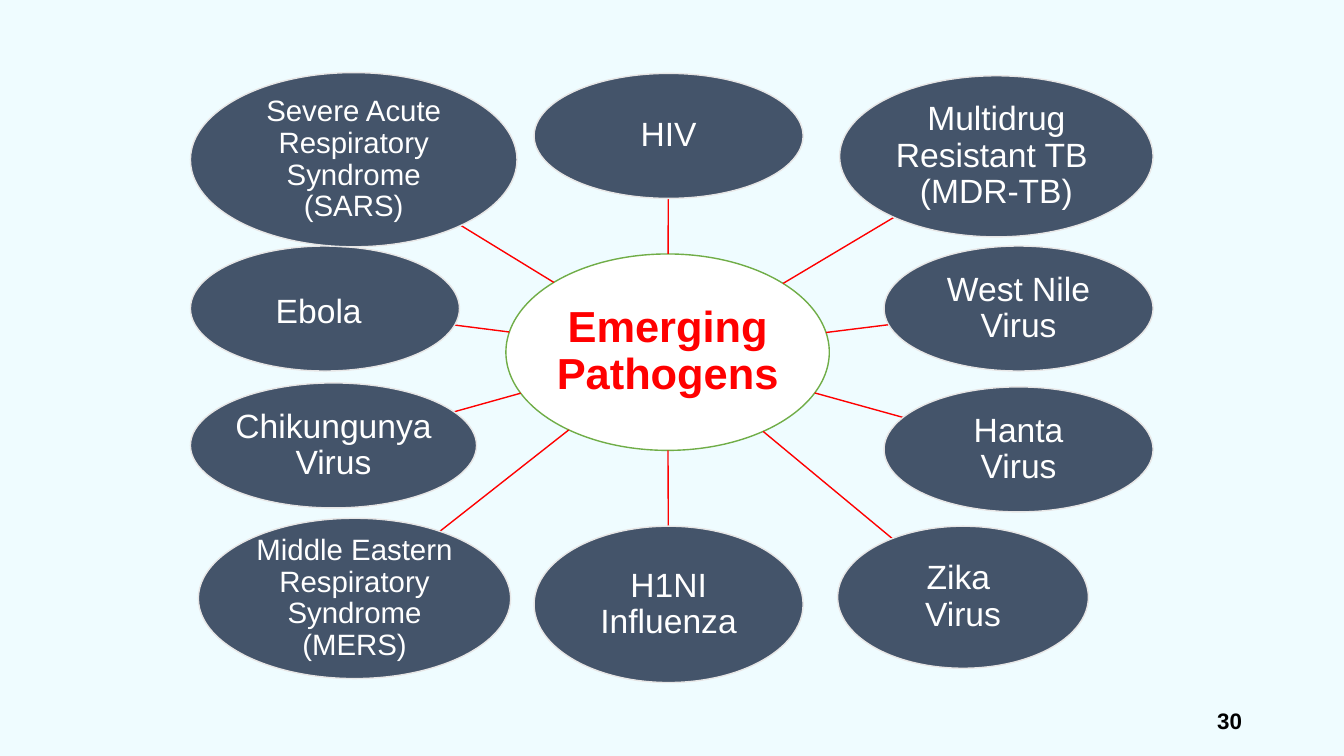
from dataclasses import dataclass
from math import hypot

from lxml import etree
from pptx import Presentation
from pptx.dml.color import RGBColor
from pptx.enum.shapes import MSO_CONNECTOR, MSO_SHAPE
from pptx.enum.text import MSO_ANCHOR, PP_ALIGN
from pptx.oxml.ns import qn
from pptx.util import Cm, Pt

OVAL = MSO_SHAPE.OVAL
STRAIGHT = MSO_CONNECTOR.STRAIGHT
MIDDLE = MSO_ANCHOR.MIDDLE
CENTER = PP_ALIGN.CENTER
RIGHT = PP_ALIGN.RIGHT


@dataclass(frozen=True)
class Theme:
    font: str = "Arial"
    page: str = "EFFCFF"
    red: str = "FF0000"
    green: str = "70AD47"
    slate: str = "44546A"
    gray: str = "E7E6E6"
    white: str = "FFFFFF"
    black: str = "000000"
    title: int = 31
    wide: int = 32
    body: int = 24
    small: int = 21
    number: int = 16
    line: int = 1


THEME = Theme()
HUB = (12.75, 6.4, 8.15, 4.95)
GERMS = [
    ("HIV", (13.46, 1.85, 6.78, 3.15), THEME.body),
    ("Multidrug Resistant TB \n(MDR-TB)", (21.16, 1.91, 7.9, 4.06), THEME.body),
    ("West Nile Virus", (22.28, 6.2, 6.78, 3.15), THEME.body),
    ("Hanta\nVirus", (22.28, 9.75, 6.78, 3.15), THEME.body),
    ("Zika \nVirus", (21.11, 13.26, 6.32, 3.58), THEME.body),
    ("H1NI Influenza", (13.46, 13.26, 6.78, 3.94), THEME.body),
    ("Middle Eastern Respiratory Syndrome (MERS)", (5, 13.06, 7.87, 4.04), THEME.small),
    ("Chikungunya Virus", (4.8, 9.65, 7.21, 3.15), THEME.body),
    ("Ebola", (4.8, 6.2, 6.78, 3.15), THEME.body),
    ("Severe Acute Respiratory Syndrome (SARS)", (4.8, 1.83, 8.23, 4.39), THEME.small),
]


def rgb(color):
    return RGBColor.from_string(color)


def style(run, size, color, bold=False):
    font = run.font
    font.name = THEME.font
    font.size = Pt(size)
    font.bold = bold
    font.color.rgb = rgb(color)


def write(shape, text, size, color, align, bold=False):
    frame = shape.text_frame
    frame.word_wrap = True
    frame.vertical_anchor = MIDDLE
    para = frame.paragraphs[0]
    para.text = text
    para.alignment = align
    for run in para.runs:
        style(run, size, color, bold)
    return para


def add_oval(slide, box, fill, edge, text, size, color, bold=False):
    oval = slide.shapes.add_shape(OVAL, *map(Cm, box))
    oval.shadow.inherit = False
    oval.fill.solid()
    oval.fill.fore_color.rgb = rgb(fill)
    oval.line.color.rgb = rgb(edge)
    oval.line.width = Pt(THEME.line)
    frame = oval.text_frame
    frame.margin_left = frame.margin_right = Cm(0.05)
    frame.margin_top = frame.margin_bottom = Cm(0.05)
    para = write(oval, text, size, color, CENTER, bold)
    para.line_spacing = 0.9
    return para


def middle(box):
    left, top, width, height = box
    return left + width / 2, top + height / 2


def rim(box, goal):
    x, y = middle(box)
    dx, dy = goal[0] - x, goal[1] - y
    scale = 1 / hypot(dx / (box[2] / 2), dy / (box[3] / 2))
    return x + dx * scale, y + dy * scale


def add_spoke(slide, box):
    start = rim(HUB, middle(box))
    end = rim(box, middle(HUB))
    spoke = slide.shapes.add_connector(STRAIGHT, *map(Cm, start + end))
    spoke.line.color.rgb = rgb(THEME.red)
    spoke.line.width = Pt(THEME.line)
    props = spoke._element.find(qn("p:spPr"))
    etree.SubElement(props, qn("a:effectLst"))


def add_germ(slide, text, box, size):
    add_spoke(slide, box)
    return add_oval(slide, box, THEME.slate, THEME.gray, text, size, THEME.white)


def add_number(slide, text):
    box = slide.shapes.add_textbox(Cm(23.93), Cm(17.65), Cm(7.62), Cm(1.02))
    write(box, text, THEME.number, THEME.black, RIGHT, True)


def main():
    deck = Presentation()
    deck.slide_width, deck.slide_height = Cm(33.87), Cm(19.05)
    slide = deck.slides.add_slide(deck.slide_layouts[6])
    back = slide.background.fill
    back.solid()
    back.fore_color.rgb = rgb(THEME.page)

    add_number(slide, "30")
    add_oval(slide, HUB, THEME.white, THEME.green, "Emerging Pathogens",
             THEME.title, THEME.red, True)
    for text, box, size in GERMS:
        para = add_germ(slide, text, box, size)
        if text == "Ebola":
            space = para.add_run()
            space.text = " "
            style(space, THEME.wide, THEME.white)
    deck.save("out.pptx")


if __name__ == "__main__":
    main()
